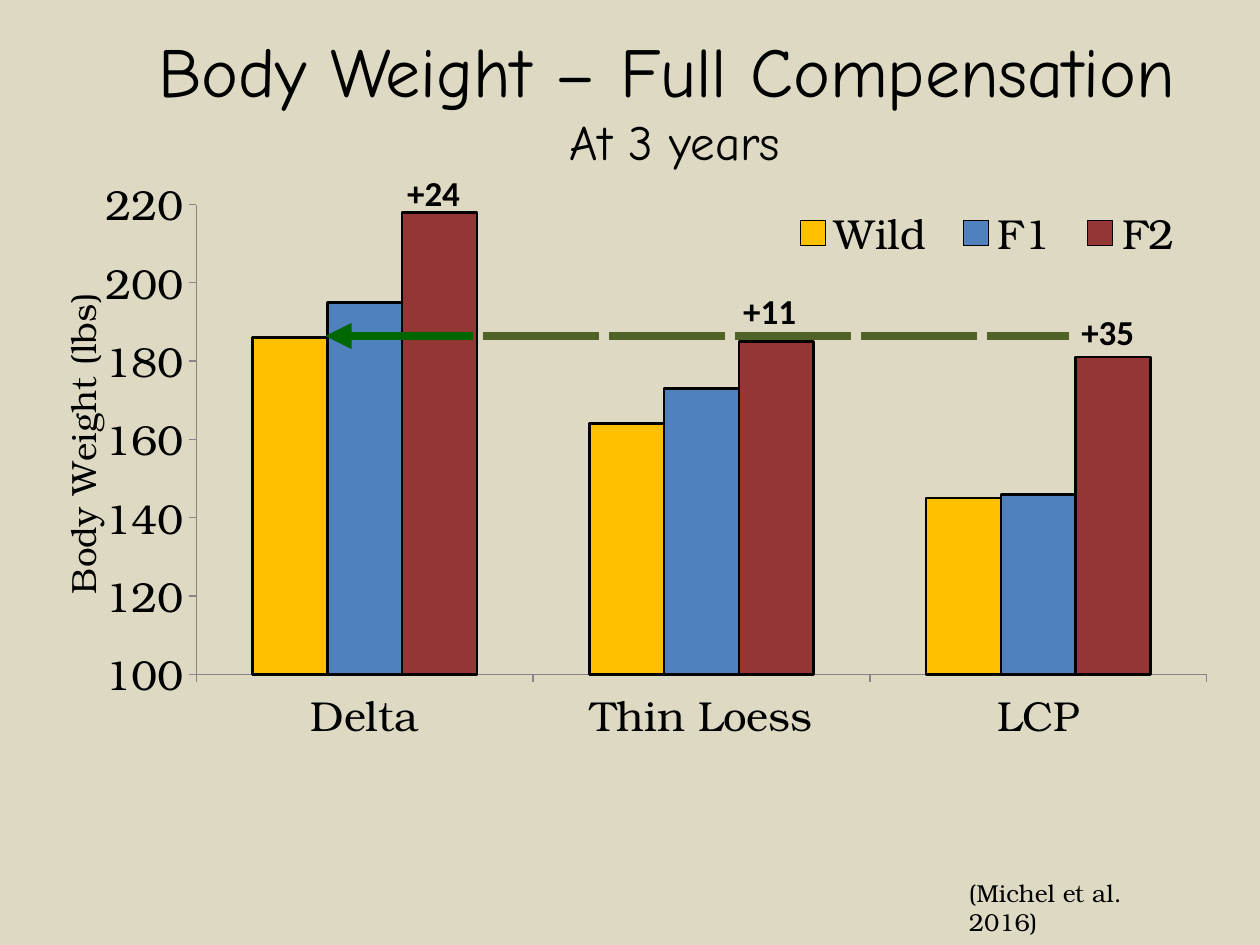
from dataclasses import dataclass
from lxml.etree import SubElement as Sub
from pptx import Presentation as Deck
from pptx.chart.data import CategoryChartData as Data
from pptx.dml.color import RGBColor as Color
from pptx.enum.chart import XL_CHART_TYPE as Kind, XL_LEGEND_POSITION as Side
from pptx.enum.chart import XL_TICK_MARK as Tick
from pptx.enum.shapes import MSO_CONNECTOR as Link
from pptx.enum.text import PP_ALIGN as Align
from pptx.oxml.ns import qn
from pptx.util import Inches, Pt


@dataclass(frozen=True)
class Theme:
    back: str = "DDD9C3"
    ink: str = "000000"
    axis: str = "868686"
    arrow: str = "006600"
    dash: str = "4F6228"
    bars: tuple = ("FFC000", "4F81BD", "943634")
    head: str = "Comic Neue"
    body: str = "TeX Gyre Bonum"
    label: str = "Calibri"
    big: int = 40
    sub: int = 28
    tick: int = 24
    mid: int = 20
    note: int = 14
    edge: float = 1.5
    rule: float = 5


LOOK = Theme()
COLS, ROWS = 120, 90
WIDE, HIGH = Inches(10), Inches(7.5)
GROUPS = ("Delta", "Thin Loess", "LCP")
WEIGHTS = {"Wild": (186, 164, 145), "F1": (195, 173, 146), "F2": (218, 185, 181)}
LEVEL = 32


def across(cols):
    return round(WIDE * cols / COLS)


def down(rows):
    return round(HIGH * rows / ROWS)


def place(col, row, cols, rows):
    return across(col), down(row), across(cols), down(rows)


def style(font, size, name, bold=False):
    font.size, font.name, font.bold = Pt(size), name, bold
    font.color.rgb = Color.from_string(LOOK.ink)


def stroke(line, hue, width):
    line.color.rgb = Color.from_string(hue)
    line.width = Pt(width)


def add_text(slide, spot, lines, name, align=Align.LEFT, bold=False):
    frame = slide.shapes.add_textbox(*place(*spot)).text_frame
    frame.word_wrap = True
    frame.text = "\n".join(text for text, size in lines)
    for para, (text, size) in zip(frame.paragraphs, lines):
        para.alignment = align
        for run in para.runs:
            style(run.font, size, name, bold)


def add_line(slide, start, end, hue, tip=False):
    link = slide.shapes.add_connector(
        Link.STRAIGHT, across(start), down(LEVEL), across(end), down(LEVEL))
    stroke(link.line, hue, LOOK.rule)
    props = link._element.spPr
    if tip:
        Sub(props.find(qn("a:ln")), qn("a:tailEnd"), type="triangle")
    Sub(props, qn("a:effectLst"))


def set_layout(node, inner=False, **shares):
    for old in node.findall(qn("c:layout")):
        node.remove(old)
    outer = Sub(node, qn("c:layout"))
    manual = Sub(outer, qn("c:manualLayout"))
    if inner:
        Sub(manual, qn("c:layoutTarget"), val="inner")
    for key in "xy":
        Sub(manual, qn(f"c:{key}Mode"), val="edge")
    for key, share in shares.items():
        Sub(manual, qn(f"c:{key}"), val=str(share))
    after = node.find(qn("c:overlay"))
    if after is None:
        node.insert(0, outer)
    else:
        after.addprevious(outer)


def style_axis(axis):
    axis.has_major_gridlines = False
    axis.major_tick_mark, axis.minor_tick_mark = Tick.OUTSIDE, Tick.NONE
    stroke(axis.format.line, LOOK.axis, 0.75)
    style(axis.tick_labels.font, LOOK.tick, LOOK.body)


def add_scale(axis):
    axis.minimum_scale, axis.maximum_scale, axis.major_unit = 100, 220, 20
    axis.tick_labels.number_format = "0"
    axis.tick_labels.number_format_is_linked = False
    title = axis.axis_title
    title.text_frame.text = "Body Weight (lbs)"
    style(title.text_frame.paragraphs[0].runs[0].font, LOOK.mid, LOOK.body)
    set_layout(title._element, x=0.02, y=0.17)


def add_legend(chart):
    chart.has_legend = True
    legend = chart.legend
    legend.position = Side.RIGHT
    legend.include_in_layout = False
    style(legend.font, LOOK.tick, LOOK.body)
    set_layout(legend._element, x=0.61, y=0.04, w=0.34, h=0.09)


def add_bars(slide, spot):
    data = Data()
    data.categories = GROUPS
    for name, pounds in WEIGHTS.items():
        data.add_series(name, pounds)
    chart = slide.shapes.add_chart(
        Kind.COLUMN_CLUSTERED, *place(*spot), data).chart
    chart.has_title = False
    style(chart.font, 10, LOOK.body)
    plot = chart.plots[0]
    plot.gap_width, plot.overlap, plot.vary_by_categories = 150, 0, False
    for bar, hue in zip(plot.series, LOOK.bars):
        bar.format.fill.solid()
        bar.format.fill.fore_color.rgb = Color.from_string(hue)
        stroke(bar.format.line, LOOK.ink, LOOK.edge)
    for axis in (chart.category_axis, chart.value_axis):
        style_axis(axis)
    add_scale(chart.value_axis)
    add_legend(chart)
    area = chart._chartSpace.find(".//" + qn("c:plotArea"))
    set_layout(area, True, x=0.14, y=0.04, w=0.817, h=0.733)


def add_gain(slide, col, row, text, align=Align.LEFT):
    add_text(slide, (col, row, 11.5, 5.3), [(text, LOOK.mid)],
             LOOK.label, align, True)


def main():
    deck = Deck()
    deck.slide_width, deck.slide_height = WIDE, HIGH
    slide = deck.slides.add_slide(deck.slide_layouts[6])
    slide.background.fill.solid()
    slide.background.fill.fore_color.rgb = Color.from_string(LOOK.back)
    add_bars(slide, (2.2, 16.8, 117.8, 61.3))
    add_text(slide, (6, 2, 115, 12),
             [("Body Weight – Full Compensation", LOOK.big),
              (" At 3 years", LOOK.sub)], LOOK.head, Align.CENTER)
    add_gain(slide, 101.8, 29, "+35")
    add_gain(slide, 69.6, 27, "+11")
    add_gain(slide, 33.5, 15.7, "+24", Align.RIGHT)
    add_line(slide, 45, 31, LOOK.arrow, True)
    for start in range(46, 95, 12):
        add_line(slide, min(start + 11, 101.8), start, LOOK.dash)
    add_text(slide, (91.1, 83, 22.9, 4.1),
             [("(Michel et al. 2016)", LOOK.note)], LOOK.body)
    deck.save("out.pptx")


if __name__ == "__main__":
    main()
